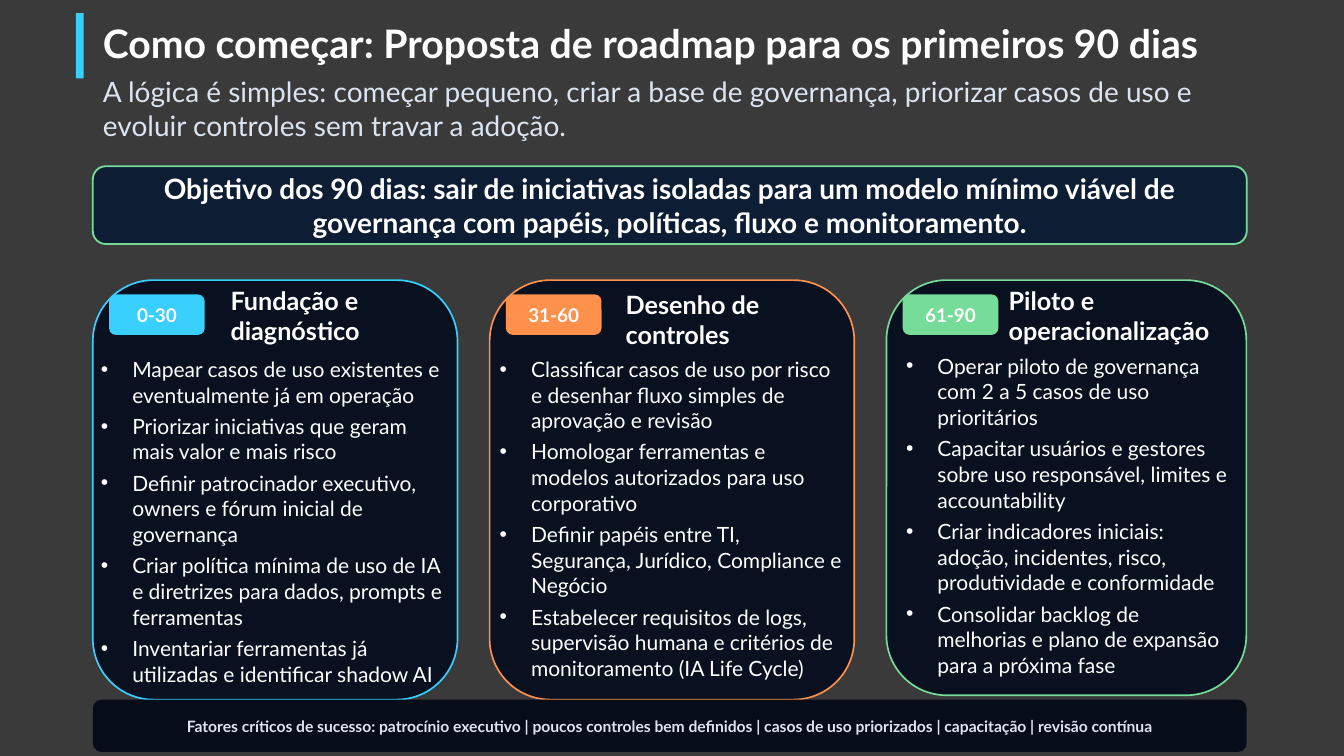
from dataclasses import dataclass

from lxml import etree
from pptx import Presentation
from pptx.dml.color import RGBColor
from pptx.enum.shapes import MSO_SHAPE
from pptx.enum.text import MSO_ANCHOR, MSO_AUTO_SIZE, PP_ALIGN
from pptx.oxml.ns import qn
from pptx.util import Cm, Pt

RECTANGLE, ROUNDED = MSO_SHAPE.RECTANGLE, MSO_SHAPE.ROUNDED_RECTANGLE
LEFT, CENTER = PP_ALIGN.LEFT, PP_ALIGN.CENTER
TOP, MIDDLE = MSO_ANCHOR.TOP, MSO_ANCHOR.MIDDLE
NO_AUTOFIT = MSO_AUTO_SIZE.NONE

FONT = "Lato"
WHITE, PALE = "FFFFFF", "DBE5F1"
BLUE, ORANGE, GREEN = "39D0FF", "FF914D", "76DC9A"
BACKGROUND, NAVY, CARD, FOOTER = "3A3A3A", "0D1D34", "091120", "060C18"

MARGIN, CONTENT_WIDTH = 2.34, 29.08
CARD_TOP, CARD_PITCH = 7.06, 10.0
BULLET_INDENT = 0.79


@dataclass
class Box:
    """Left, top, width and height in centimetres."""
    left: float
    top: float
    width: float
    height: float

    def lengths(self) -> tuple:
        return Cm(self.left), Cm(self.top), Cm(self.width), Cm(self.height)


@dataclass
class Style:
    size: float
    color: str = WHITE
    bold: bool = False
    align: int = LEFT
    anchor: int = TOP


@dataclass
class Phase:
    days: str
    heading: str
    color: str
    card_width: float
    card_height: float
    heading_box: Box
    list_box: Box
    placeholder: int
    actions: list[str]


TITLE = Style(28, bold=True)
SUBTITLE = Style(20, PALE)
OBJECTIVE = Style(20, bold=True, align=CENTER, anchor=MIDDLE)
TAG = Style(13.5, bold=True, align=CENTER, anchor=MIDDLE)
HEADING = Style(18, bold=True)
ACTIONS = Style(15)
FACTORS = Style(11.2, PALE, bold=True, align=CENTER, anchor=MIDDLE)

PHASES = [
    Phase("0-30", "Fundação e diagnóstico", BLUE, 9.19, 10.57,
          Box(5.56, 7.06, 6.02, 1.8), Box(2.29, 8.84, 9.19, 8.66), 2, [
              "Mapear casos de uso existentes e eventualmente já em operação",
              "Priorizar iniciativas que geram mais valor e mais risco",
              "Definir patrocinador executivo, owners e fórum inicial de governança",
              "Criar política mínima de uso de IA e diretrizes para dados, prompts e ferramentas",
              "Inventariar ferramentas já utilizadas e identificar shadow AI"]),
    Phase("31-60", "Desenho de controles", ORANGE, 9.19, 10.57,
          Box(15.52, 7.16, 5.51, 1.8), Box(12.34, 8.84, 9.19, 7.87), 3, [
              "Classificar casos de uso por risco e desenhar fluxo simples de aprovação e revisão",
              "Homologar ferramentas e modelos autorizados para uso corporativo",
              "Definir papéis entre TI, Segurança, Jurídico, Compliance e Negócio",
              "Estabelecer requisitos de logs, supervisão humana e critérios de "
              "monitoramento (IA Life Cycle)"]),
    Phase("61-90", "Piloto e operacionalização", GREEN, 9.07, 10.46,
          Box(25.17, 7.06, 6.65, 1.8), Box(22.58, 8.76, 8.64, 8.51), 4, [
              "Operar piloto de governança com 2 a 5 casos de uso prioritários",
              "Capacitar usuários e gestores sobre uso responsável, limites e accountability",
              "Criar indicadores iniciais: adoção, incidentes, risco, produtividade e conformidade",
              "Consolidar backlog de melhorias e plano de expansão para a próxima fase"]),
]


def rgb(color: str) -> RGBColor:
    return RGBColor.from_string(color)


def add_bullet(paragraph) -> None:
    properties = paragraph._p.get_or_add_pPr()
    properties.set("marL", str(Cm(BULLET_INDENT)))
    properties.set("indent", str(-Cm(BULLET_INDENT)))
    etree.SubElement(properties, qn("a:buFont"), typeface="Arial")
    etree.SubElement(properties, qn("a:buChar"), char="•")


def write(shape, lines: list[str], style: Style, bullets: bool = False) -> None:
    frame = shape.text_frame
    frame.word_wrap = True
    frame.auto_size = NO_AUTOFIT
    frame.vertical_anchor = style.anchor
    frame.text = "\n".join(lines)
    for paragraph in frame.paragraphs:
        if bullets:
            add_bullet(paragraph)
            paragraph.line_spacing = 1.02
            paragraph.space_after = Pt(4)
        paragraph.space_before = Pt(0)
        paragraph.alignment = style.align
        font = paragraph.font
        font.name, font.size, font.bold = FONT, Pt(style.size), style.bold
        font.color.rgb = rgb(style.color)


def add_panel(slide, kind: int, box: Box, fill: str, line: str = "", line_width: float = 1.2):
    shape = slide.shapes.add_shape(kind, *box.lengths())
    shape.shadow.inherit = False
    shape.fill.solid()
    shape.fill.fore_color.rgb = rgb(fill)
    if line:
        shape.line.color.rgb = rgb(line)
        shape.line.width = Pt(line_width)
    else:
        shape.line.fill.background()
    return shape


def place(placeholder, box: Box) -> None:
    """Move a placeholder to its box and in front of the panels drawn so far."""
    placeholder.left, placeholder.top, placeholder.width, placeholder.height = box.lengths()
    placeholder.element.getparent().append(placeholder.element)


def add_phase(slide, phase: Phase, left: float) -> None:
    add_panel(slide, ROUNDED, Box(left, CARD_TOP, phase.card_width, phase.card_height),
              CARD, phase.color)
    tag = add_panel(slide, ROUNDED, Box(left + 0.41, CARD_TOP + 0.36, 2.41, 1.02), phase.color)
    write(tag, [phase.days], TAG)
    heading = slide.shapes.add_textbox(*phase.heading_box.lengths())
    write(heading, [phase.heading], HEADING)
    actions = slide.placeholders[phase.placeholder]
    place(actions, phase.list_box)
    write(actions, phase.actions, ACTIONS, bullets=True)


def main() -> None:
    presentation = Presentation()
    presentation.slide_width, presentation.slide_height = Cm(33.87), Cm(19.05)
    comparison_layout = presentation.slide_layouts[4]
    slide = presentation.slides.add_slide(comparison_layout)
    slide.background.fill.solid()
    slide.background.fill.fore_color.rgb = rgb(BACKGROUND)

    # Title and subtitle
    add_panel(slide, RECTANGLE, Box(1.91, 0.33, 0.2, 1.65), BLUE)
    title = slide.shapes.title
    place(title, Box(MARGIN, 0.36, 30.51, 1.45))
    write(title, ["Como começar: Proposta de roadmap para os primeiros 90 dias"], TITLE)
    subtitle = slide.placeholders[1]
    place(subtitle, Box(MARGIN, 1.75, 28.19, 1.96))
    write(subtitle, ["A lógica é simples: começar pequeno, criar a base de governança, "
                     "priorizar casos de uso e evoluir controles sem travar a adoção."], SUBTITLE)

    # Objective
    objective = add_panel(slide, ROUNDED, Box(MARGIN, 4.19, CONTENT_WIDTH, 1.96),
                          NAVY, GREEN, 1.3)
    write(objective, ["Objetivo dos 90 dias: sair de iniciativas isoladas para um modelo mínimo "
                      "viável de governança com papéis, políticas, fluxo e monitoramento."],
          OBJECTIVE)

    # Three phases
    for column, phase in enumerate(PHASES):
        add_phase(slide, phase, MARGIN + column * CARD_PITCH)

    # Success factors
    factors = add_panel(slide, ROUNDED, Box(MARGIN, 17.63, CONTENT_WIDTH, 1.32), FOOTER)
    write(factors, ["Fatores críticos de sucesso: patrocínio executivo | poucos controles bem "
                    "definidos | casos de uso priorizados | capacitação | revisão contínua"],
          FACTORS)

    presentation.save("out.pptx")


if __name__ == "__main__":
    main()
